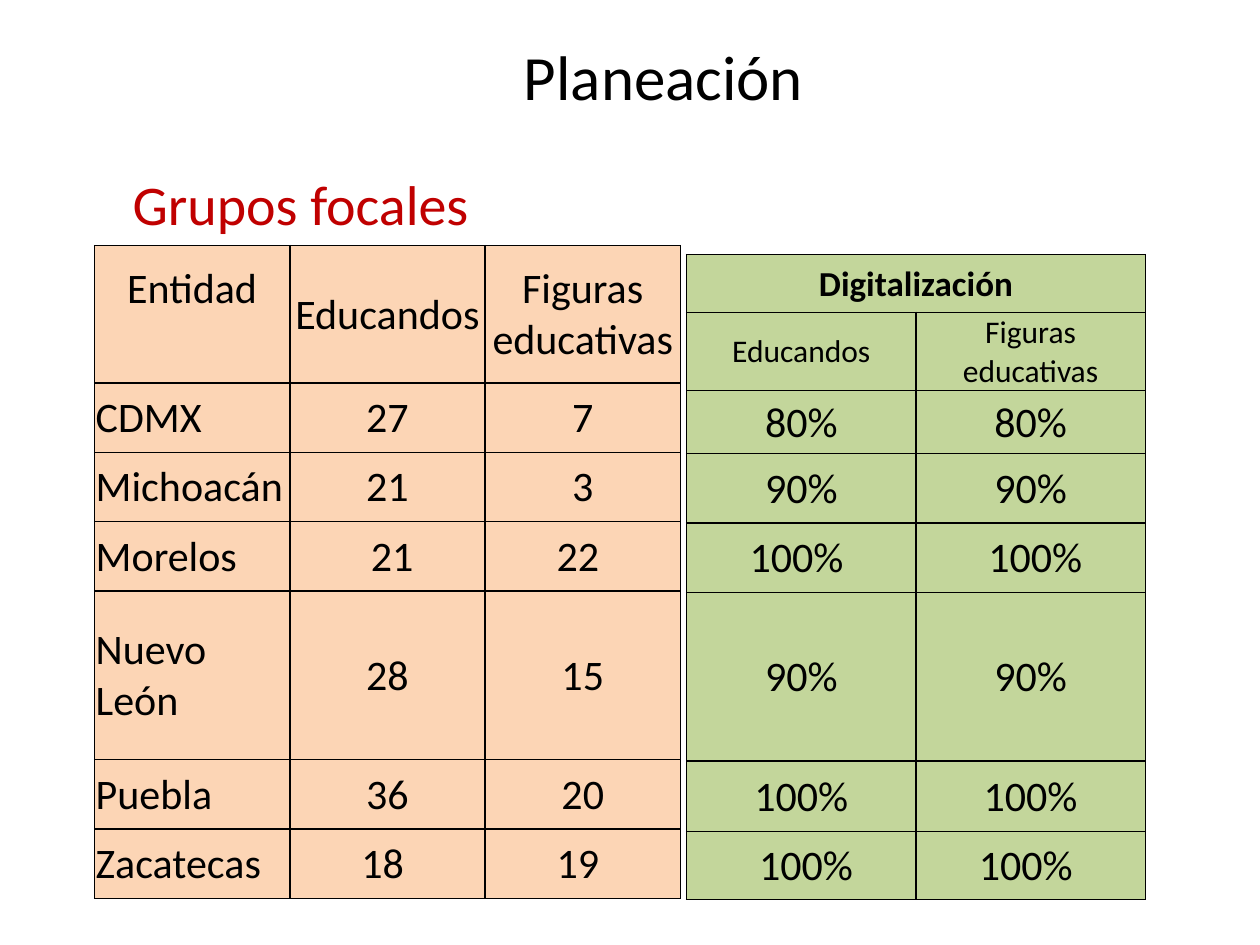
from lxml.etree import SubElement
from pptx import Presentation
from pptx.dml.color import RGBColor
from pptx.enum.text import MSO_ANCHOR, MSO_AUTO_SIZE, PP_ALIGN
from pptx.oxml.ns import qn
from pptx.util import Inches, Pt

COLORS = {"text": "000000", "heading": "C00000", "border": "000000",
          "groups": "FCD5B5", "digital": "C3D69B"}
FONT = "Calibri"

prs = Presentation()
prs.slide_width, prs.slide_height = Inches(10), Inches(7.5)
s = prs.slides.add_slide(prs.slide_layouts[6])


def style(p, size, color="text", bold=False, align=PP_ALIGN.CENTER):
    p.alignment = align
    for r in p.runs:
        r.font.name, r.font.size, r.font.bold = FONT, Pt(size), bold
        r.font.color.rgb = RGBColor.from_string(COLORS[color])


def add_grid(left, top, col_width, heights, rows, fill):
    cols = len(rows[-1])
    frame = s.shapes.add_table(len(rows), cols, Inches(left), Inches(top),
                               Inches(col_width * cols), Inches(sum(heights)))
    table = frame.table
    for col in table.columns:
        col.width = Inches(col_width)
    for row, height, texts in zip(table.rows, heights, rows):
        row.height = Inches(height)
        for cell, text in zip(row.cells, texts):
            cell.text_frame.text = text
            style(cell.text_frame.paragraphs[0], 24)
        for cell in row.cells:
            cell.vertical_anchor = MSO_ANCHOR.MIDDLE
            cell.margin_left = cell.margin_right = cell.margin_top = Inches(0.01)
            cell.margin_bottom = 0
            tcPr = cell._tc.get_or_add_tcPr()
            for side in ("a:lnL", "a:lnR", "a:lnT", "a:lnB"):
                ln = SubElement(tcPr, qn(side), w=str(Pt(1)))
                SubElement(SubElement(ln, qn("a:solidFill")), qn("a:srgbClr"),
                           val=COLORS["border"])
            cell.fill.solid()
            cell.fill.fore_color.rgb = RGBColor.from_string(COLORS[fill])
    return table


# Focus groups by state
groups = [
    ("Entidad", "Educandos", "Figuras educativas"),
    ("CDMX", "27", "7"),
    ("Michoacán", "21", "3"),
    ("Morelos", " 21", "22 "),
    ("Nuevo León", "28", "15"),
    ("Puebla", "36", "20"),
    ("Zacatecas", "18 ", "19 "),
]
table = add_grid(0.75, 1.95, 1.55, [1.09, 0.55, 0.55, 0.55, 1.34, 0.55, 0.55],
                 groups, "groups")
table.cell(0, 0).margin_bottom = Inches(0.41)  # lifts the header by one line
for i in range(1, len(groups)):
    table.cell(i, 0).text_frame.paragraphs[0].alignment = PP_ALIGN.LEFT

# Digitization progress
digital = [
    ("Digitalización",),
    ("Educandos", "Figuras educativas"),
    ("80%", "80%"),
    ("90%", "90%"),
    ("100% ", " 100%"),
    ("90%", "90%"),
    ("100%", "100%"),
    (" 100%", "100% "),
]
table = add_grid(5.45, 2.02, 1.82, [0.46, 0.62, 0.5, 0.55, 0.55, 1.34, 0.56, 0.54],
                 digital, "digital")
table.cell(0, 0).merge(table.cell(0, 1))
style(table.cell(0, 0).text_frame.paragraphs[0], 20, bold=True)
for j in range(2):
    style(table.cell(1, j).text_frame.paragraphs[0], 18)

# Heading and title
for text, box, size, color, align, wrap in [
    ("Grupos focales", (0.12, 1.3, 3.7, 0.64), 32, "heading", PP_ALIGN.RIGHT, True),
    ("Planeación", (4.06, 0.25, 2.44, 0.71), 36, "text", PP_ALIGN.LEFT, False),
]:
    tf = s.shapes.add_textbox(*map(Inches, box)).text_frame
    tf.word_wrap = wrap
    tf.auto_size = MSO_AUTO_SIZE.SHAPE_TO_FIT_TEXT
    tf.text = text
    style(tf.paragraphs[0], size, color, align=align)

prs.save("out.pptx")
